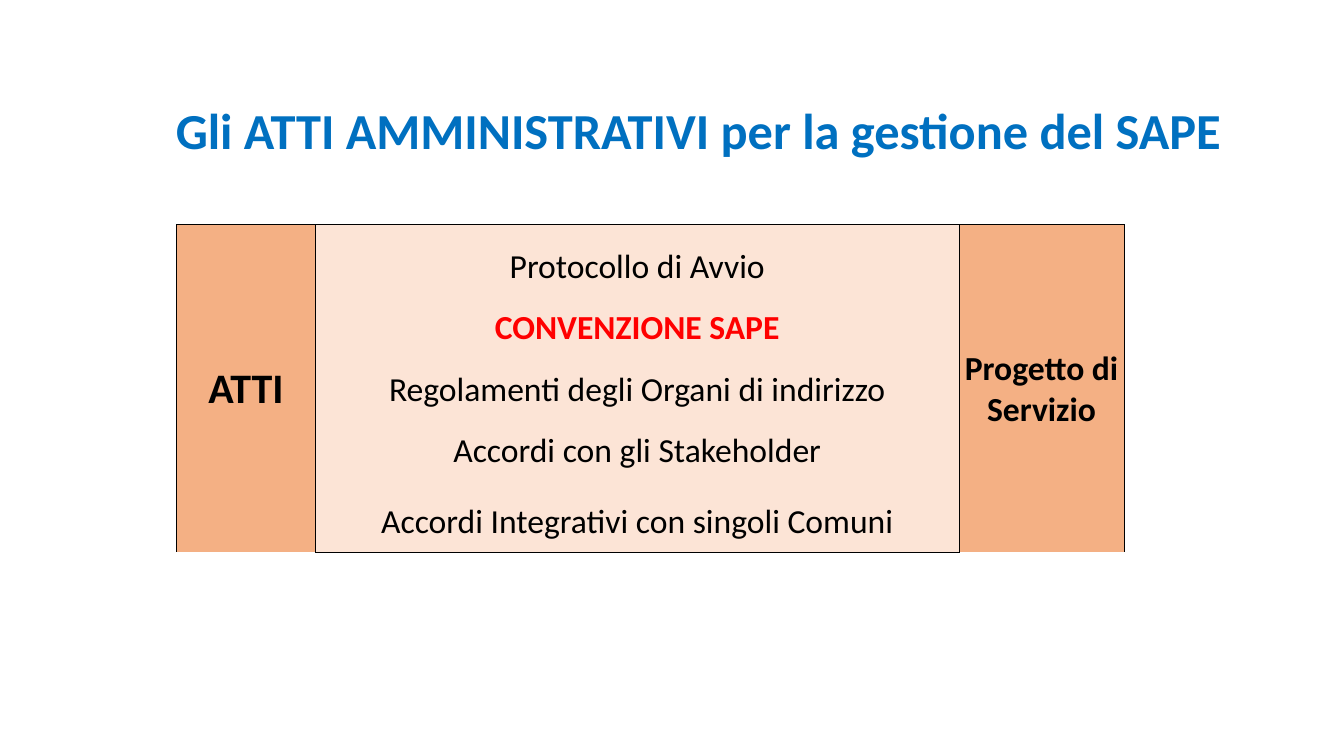
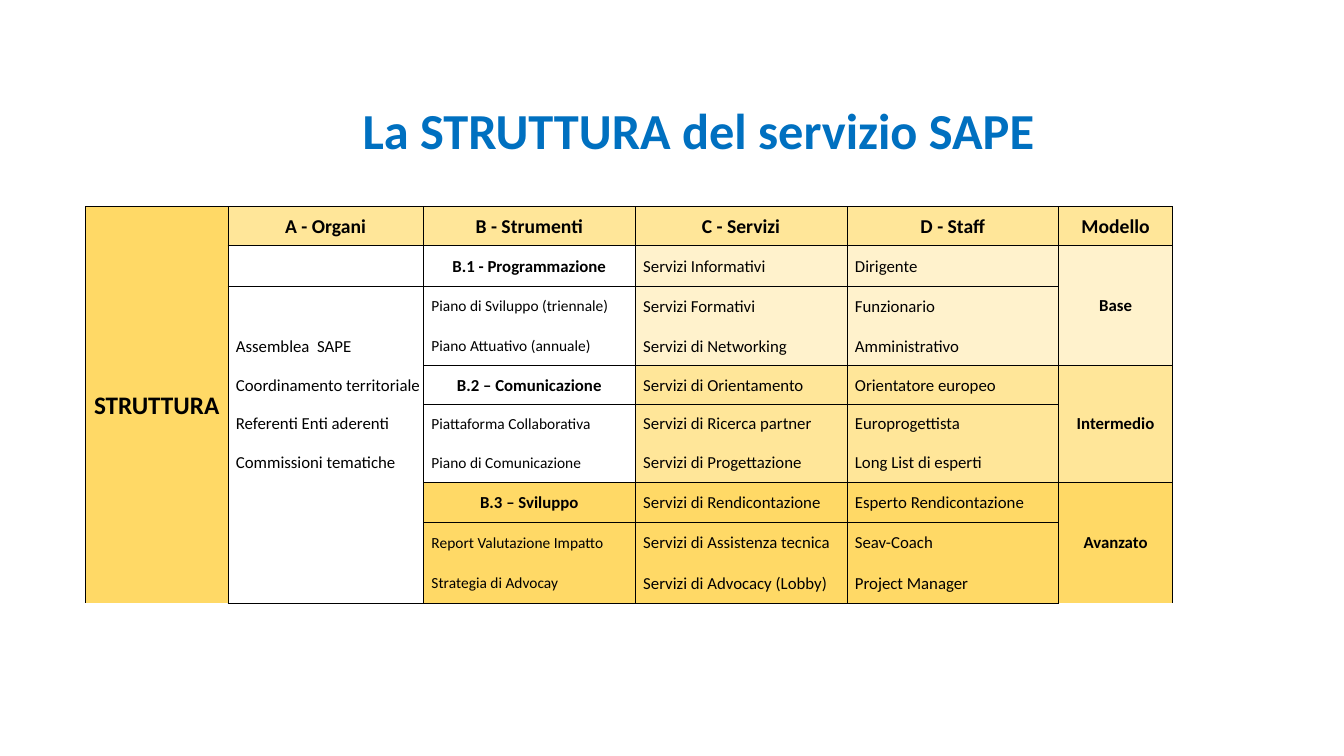
from collections import namedtuple
from dataclasses import dataclass

from lxml.etree import SubElement
from pptx import Presentation
from pptx.dml.color import RGBColor
from pptx.enum.text import MSO_ANCHOR as Anchor, MSO_AUTO_SIZE as AutoSize, PP_ALIGN as Align
from pptx.oxml.ns import qn
from pptx.util import Inches, Pt

Box = namedtuple("Box", "left top width height")


@dataclass(frozen=True)
class Theme:
    """Colours, fonts, type sizes and line settings of the deck."""
    font: str = "Calibri"
    title: str = "0070C0"
    ink: str = "000000"
    alert: str = "FF0000"
    white: str = "FFFFFF"
    orange: str = "F4B084"
    peach: str = "FCE4D6"
    cream: str = "FFF2CC"
    sand: str = "FFE699"
    gold: str = "FFD966"
    title_size: int = 36
    acts_head_size: int = 30
    acts_size: int = 24
    side_size: int = 18
    head_size: int = 14
    body_size: int = 12
    small_size: int = 11
    border: float = 0.5
    inset: float = 0.01
    indent: float = 0.08


THEME = Theme()
TITLE_BOX = Box(1.18, 1, 11.5, 0.65)


@dataclass(frozen=True)
class Style:
    """Look of the text in a table cell."""
    size: int
    bold: bool = False
    align: Align = Align.CENTER
    colour: str = THEME.ink
    spacing: float = 1.0
    gap: int = 0


ACTS_HEAD = Style(THEME.acts_head_size, True)
ACTS_SIDE = Style(THEME.acts_size, True)
ACT = Style(THEME.acts_size, spacing=1.5, gap=3)
KEY_ACT = Style(THEME.acts_size, True, colour=THEME.alert, spacing=1.5, gap=3)
SIDE = Style(THEME.side_size, True)
HEAD = Style(THEME.head_size, True)
GROUP = Style(THEME.body_size, True)
BODY = Style(THEME.body_size, align=Align.LEFT)
SMALL = Style(THEME.small_size, align=Align.LEFT)

ACTS = [
    ("Protocollo di Avvio", ACT),
    ("CONVENZIONE SAPE", KEY_ACT),
    ("Regolamenti degli Organi di indirizzo", ACT),
    ("Accordi con gli Stakeholder", ACT),
    ("Accordi Integrativi con singoli Comuni", ACT),
]
HEADINGS = ["A - Organi", "B - Strumenti", "C - Servizi", "D - Staff", "Modello"]
BODIES = ["Assemblea  SAPE", "Coordinamento territoriale",
          "Referenti Enti aderenti", "Commissioni tematiche"]

Level = namedtuple("Level", "name fill tool_fill tools services staff")
LEVELS = [
    Level("Base", THEME.cream, THEME.white,
          ["B.1 - Programmazione", "Piano di Sviluppo (triennale)", "Piano Attuativo (annuale)"],
          ["Servizi Informativi", "Servizi Formativi", "Servizi di Networking"],
          ["Dirigente", "Funzionario", "Amministrativo"]),
    Level("Intermedio", THEME.sand, THEME.white,
          ["B.2 – Comunicazione", "Piattaforma Collaborativa", "Piano di Comunicazione"],
          ["Servizi di Orientamento", "Servizi di Ricerca partner", "Servizi di Progettazione"],
          ["Orientatore europeo", "Europrogettista", "Long List di esperti"]),
    Level("Avanzato", THEME.gold, THEME.gold,
          ["B.3 – Sviluppo", "Report Valutazione Impatto", "Strategia di Advocay"],
          ["Servizi di Rendicontazione", "Servizi di Assistenza tecnica",
           "Servizi di Advocacy (Lobby)"],
          ["Esperto Rendicontazione", "Seav-Coach", "Project Manager"]),
]


def add_run(para, text, size, bold, colour):
    """Add one formatted run to a paragraph."""
    span = para.add_run()
    span.text = text
    span.font.name = THEME.font
    span.font.size = Pt(size)
    span.font.bold = bold
    span.font.color.rgb = RGBColor.from_string(colour)


def add_titled_page(deck, title):
    """Add a title-only slide and format its title."""
    page = deck.slides.add_slide(deck.slide_layouts[5])
    holder = page.shapes.title
    holder.left, holder.top, holder.width, holder.height = map(Inches, TITLE_BOX)
    frame = holder.text_frame
    frame.word_wrap = True
    frame.auto_size = AutoSize.SHAPE_TO_FIT_TEXT
    frame.vertical_anchor = Anchor.MIDDLE
    para = frame.paragraphs[0]
    para.alignment = Align.CENTER
    para.line_spacing = 0.9
    add_run(para, title, THEME.title_size, True, THEME.title)
    return page


def add_plain_table(page, box, col_weights, row_weights):
    """Add an unstyled table whose columns and rows share out the box."""
    table = page.shapes.add_table(len(row_weights), len(col_weights), *map(Inches, box)).table
    table.first_row = table.horz_banding = False
    style_id = table._tbl.tblPr.find(qn("a:tableStyleId"))
    style_id.text = "{2D5ABB26-0587-4C30-8999-92F81FD0307C}"
    for column, weight in zip(table.columns, col_weights):
        column.width = Inches(box.width * weight / sum(col_weights))
    for row, weight in zip(table.rows, row_weights):
        row.height = Inches(box.height * weight / sum(row_weights))
    return table


def paint_cell(cell, fill, sides):
    """Draw the given sides of a cell and fill it."""
    properties = cell._tc.get_or_add_tcPr()
    for side in "LRTB":
        if side in sides:
            line = SubElement(properties, qn(f"a:ln{side}"), w=str(Pt(THEME.border)))
            solid = SubElement(line, qn("a:solidFill"))
            SubElement(solid, qn("a:srgbClr"), val=THEME.ink)
    cell.fill.solid()
    cell.fill.fore_color.rgb = RGBColor.from_string(fill)


def write_cell(cell, text, style):
    """Set the text of a cell, indented when aligned left."""
    indented = style.align == Align.LEFT
    cell.margin_left = Inches(THEME.indent if indented else THEME.inset)
    cell.margin_right = cell.margin_top = Inches(THEME.inset)
    cell.margin_bottom = 0
    cell.vertical_anchor = Anchor.MIDDLE
    para = cell.text_frame.paragraphs[0]
    para.alignment = style.align
    para.line_spacing = style.spacing
    if style.gap:
        para.space_after = Pt(style.gap)
    add_run(para, text, style.size, style.bold, style.colour)


def add_block(table, column, top, count, fill, entries, offset=0, closed=True):
    """Outline and fill a run of cells in a column and write one entry a row."""
    for index in range(count):
        sides = "LR" + "T" * (index == 0) + "B" * (closed and index == count - 1)
        paint_cell(table.cell(top + index, column), fill, sides)
    for index, (text, style) in enumerate(entries, top + offset):
        write_cell(table.cell(index, column), text, style)


def add_merged(table, column, top, count, fill, text, style, closed=True):
    """Join a run of cells in a column and write one text in it."""
    add_block(table, column, top, count, fill, [(text, style)], closed=closed)
    table.cell(top, column).merge(table.cell(top + count - 1, column))


def add_acts(page, box):
    """Place the table of administrative acts."""
    count = len(ACTS)
    table = add_plain_table(page, box, [1.38, 6.38, 1.64], [0.61] * (count - 1) + [0.8])
    add_merged(table, 0, 0, count, THEME.orange, "ATTI", ACTS_HEAD, closed=False)
    add_block(table, 1, 0, count, THEME.peach, ACTS)
    add_merged(table, 2, 0, count, THEME.orange, "Progetto di Servizio", ACTS_SIDE)


def add_structure(page, box):
    """Place the table of the service structure."""
    depth = 3
    count = depth * len(LEVELS)
    table = add_plain_table(page, box, [1.41, 1.94, 2.1, 2.1, 2.1, 1.13], [1] * (count + 1))
    add_merged(table, 0, 0, count + 1, THEME.gold, "STRUTTURA", SIDE)
    for column, heading in enumerate(HEADINGS, 1):
        add_block(table, column, 0, 1, THEME.sand, [(heading, HEAD)])
    add_block(table, 1, 1, count, THEME.white, [(text, BODY) for text in BODIES], offset=2)
    for index, level in enumerate(LEVELS):
        top = 1 + index * depth
        tools = zip(level.tools, [GROUP, SMALL, SMALL])
        add_block(table, 2, top, depth, level.tool_fill, tools)
        for column, texts in enumerate([level.services, level.staff], 3):
            add_block(table, column, top, depth, level.fill, [(text, BODY) for text in texts])
        add_merged(table, 5, top, depth, level.fill, level.name, GROUP)


def main():
    """Build and save the deck."""
    deck = Presentation()
    deck.slide_width, deck.slide_height = Inches(13.33), Inches(7.5)
    page = add_titled_page(deck, "Gli ATTI AMMINISTRATIVI per la gestione del SAPE")
    add_acts(page, Box(1.75, 2.23, 9.4, 3.24))
    page = add_titled_page(deck, "La STRUTTURA del servizio SAPE")
    add_structure(page, Box(0.85, 2.05, 10.78, 3.87))
    deck.save("out.pptx")


if __name__ == "__main__":
    main()
